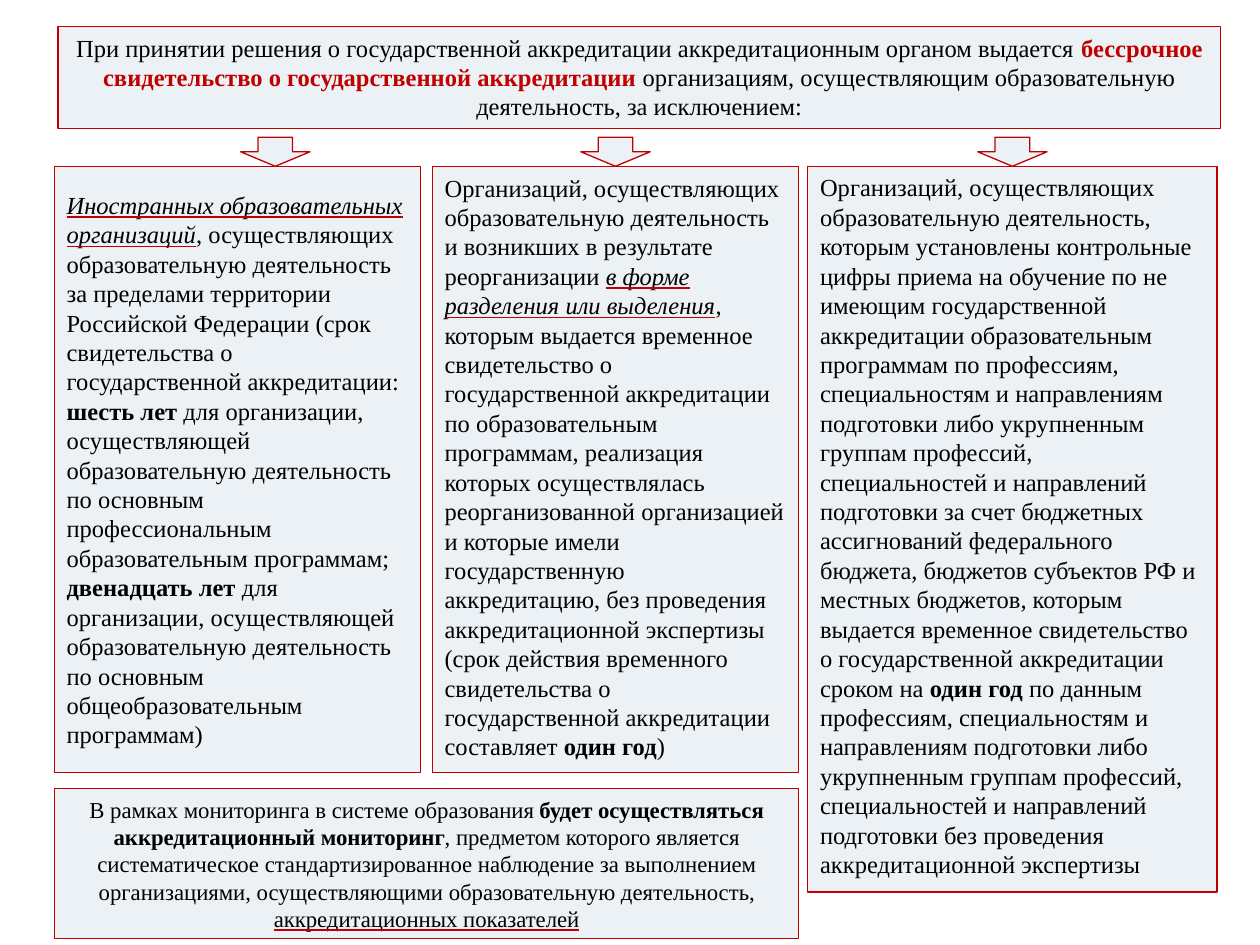
from lxml.etree import SubElement
from pptx import Presentation
from pptx.dml.color import RGBColor
from pptx.enum.shapes import MSO_SHAPE
from pptx.enum.text import MSO_ANCHOR, PP_ALIGN
from pptx.oxml.ns import qn
from pptx.util import Inches, Pt

PALE = RGBColor(0xEC, 0xF1, 0xF5)
RED = RGBColor(0xC0, 0x00, 0x00)
BLACK = RGBColor(0x00, 0x00, 0x00)
FONT = "Times New Roman"
COLUMNS, ROWS = 100, 75


def text(content, bold=False, italic=False, underline=False, color=BLACK):
    return {"content": content, "bold": bold, "italic": italic,
            "underline": underline, "color": color}


class SlideBuilder:
    def __init__(self, presentation):
        self.width = presentation.slide_width
        self.height = presentation.slide_height
        self.slide = presentation.slides.add_slide(presentation.slide_layouts[6])

    def add_outlined(self, kind, left, top, width, height):
        shape = self.slide.shapes.add_shape(
            kind,
            round(self.width * left / COLUMNS), round(self.height * top / ROWS),
            round(self.width * width / COLUMNS), round(self.height * height / ROWS))
        shape.shadow.inherit = False
        shape.fill.solid()
        shape.fill.fore_color.rgb = PALE
        shape.line.color.rgb = RED
        shape.line.width = Pt(0.75)
        return shape

    def add_panel(self, left, top, width, height, parts, size=14,
                  align=PP_ALIGN.LEFT, anchor=MSO_ANCHOR.TOP):
        shape = self.add_outlined(MSO_SHAPE.RECTANGLE, left, top, width, height)
        frame = shape.text_frame
        frame.word_wrap = True
        frame.vertical_anchor = anchor
        paragraph = frame.paragraphs[0]
        paragraph.alignment = align
        for part in parts:
            self.add_run(paragraph, part, size)

    def add_run(self, paragraph, part, size):
        run = paragraph.add_run()
        run.text = part["content"]
        font = run.font
        font.size = Pt(size)
        font.bold = part["bold"]
        font.italic = part["italic"]
        font.underline = part["underline"]
        font.color.rgb = part["color"]
        if part["underline"]:
            underline_fill = SubElement(run._r.get_or_add_rPr(), qn("a:uFill"))
            solid = SubElement(underline_fill, qn("a:solidFill"))
            SubElement(solid, qn("a:srgbClr")).set("val", str(RED))
        font.name = FONT

    def add_arrow(self, left):
        self.add_outlined(MSO_SHAPE.DOWN_ARROW, left, 10.9, 5.5, 2.3)


def main():
    presentation = Presentation()
    presentation.slide_width = Inches(10)
    presentation.slide_height = Inches(7.5)
    builder = SlideBuilder(presentation)

    builder.add_panel(4.6, 2.1, 92.3, 8.1, [
        text("При принятии решения о государственной аккредитации аккредитационным органом выдается "),
        text("бессрочное свидетельство о государственной аккредитации", bold=True, color=RED),
        text(" организациям, осуществляющим образовательную деятельность, за исключением:"),
    ], align=PP_ALIGN.CENTER)

    foreign_organizations = [
        text("Иностранных образовательных организаций", italic=True, underline=True),
        text(", осуществляющих образовательную деятельность за пределами территории "
             "Российской Федерации (срок свидетельства о государственной аккредитации: "),
        text("шесть лет", bold=True),
        text(" для организации, осуществляющей образовательную деятельность по основным "
             "профессиональным образовательным программам; "),
        text("двенадцать лет", bold=True),
        text(" для организации, осуществляющей образовательную деятельность по основным "
             "общеобразовательным программам)"),
    ]
    reorganized_organizations = [
        text("Организаций, осуществляющих образовательную деятельность и возникших "
             "в результате реорганизации "),
        text("в форме разделения или выделения", italic=True, underline=True),
        text(", которым выдается временное свидетельство о государственной аккредитации "
             "по образовательным программам, реализация которых осуществлялась "
             "реорганизованной организацией и которые имели государственную аккредитацию, "
             "без проведения аккредитационной экспертизы (срок действия временного "
             "свидетельства о государственной аккредитации составляет "),
        text("один год", bold=True),
        text(")"),
    ]
    quota_organizations = [
        text("Организаций, осуществляющих образовательную деятельность, которым установлены "
             "контрольные цифры приема на обучение по не имеющим государственной аккредитации "
             "образовательным программам по профессиям, специальностям и направлениям "
             "подготовки либо укрупненным группам профессий, специальностей и направлений "
             "подготовки за счет бюджетных ассигнований федерального бюджета, бюджетов "
             "субъектов РФ и местных бюджетов, которым выдается временное свидетельство "
             "о государственной аккредитации сроком на "),
        text("один год", bold=True),
        text(" по данным профессиям, специальностям и направлениям подготовки либо "
             "укрупненным группам профессий, специальностей и направлений подготовки "
             "без проведения аккредитационной экспертизы"),
    ]
    exceptions = [
        (4.3, 29.1, 48.1, 19.1, MSO_ANCHOR.MIDDLE, foreign_organizations),
        (34.3, 29.1, 48.1, 46.1, MSO_ANCHOR.TOP, reorganized_organizations),
        (64.1, 32.5, 57.6, 77.6, MSO_ANCHOR.TOP, quota_organizations),
    ]
    for left, width, height, arrow_left, anchor, parts in exceptions:
        builder.add_panel(left, 13.2, width, height, parts, anchor=anchor)
        builder.add_arrow(arrow_left)

    builder.add_panel(4.3, 62.6, 59.1, 11.9, [
        text("В рамках мониторинга в системе образования "),
        text("будет осуществляться аккредитационный мониторинг", bold=True),
        text(", предметом которого является систематическое стандартизированное наблюдение "
             "за выполнением организациями, осуществляющими образовательную деятельность, "),
        text("аккредитационных показателей", underline=True),
    ], size=13, align=PP_ALIGN.CENTER, anchor=MSO_ANCHOR.MIDDLE)

    presentation.save("out.pptx")


if __name__ == "__main__":
    main()
